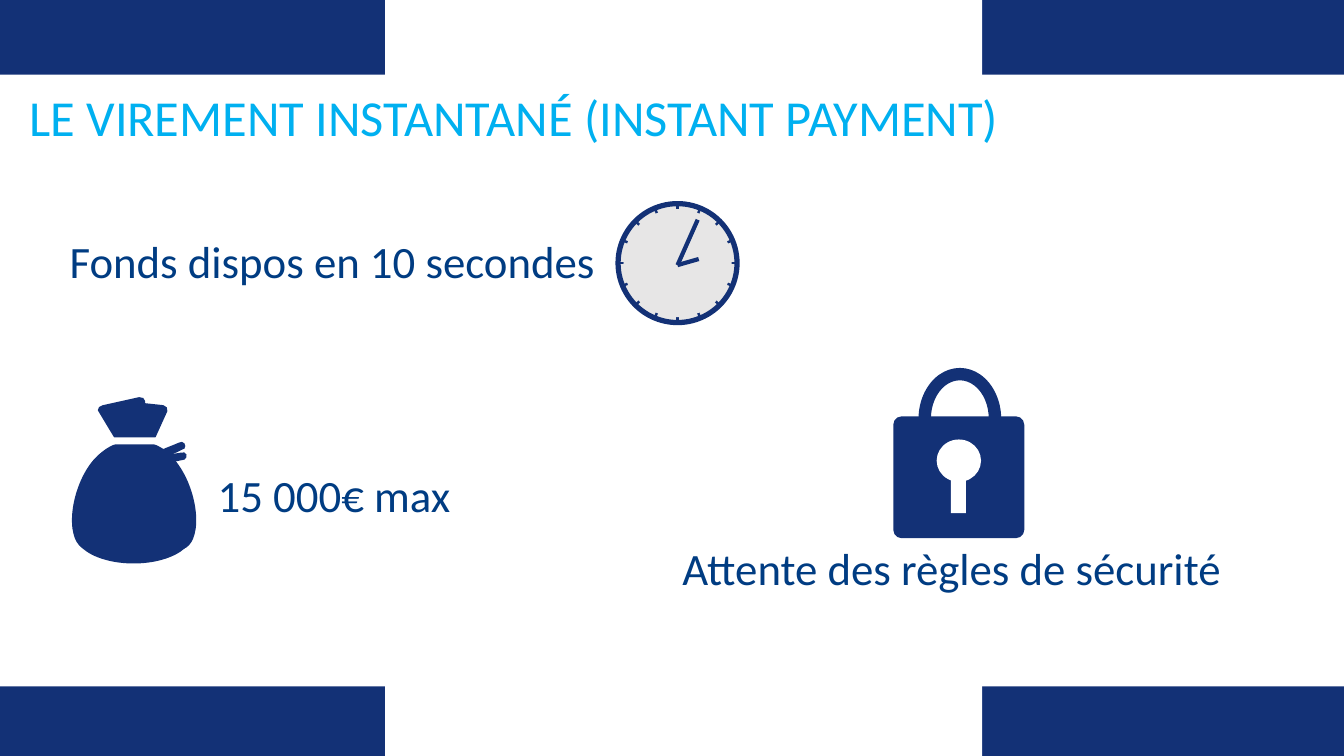
import math

import pptx
import pptx.dml.color
import pptx.enum.shapes
import pptx.enum.text
import pptx.oxml
import pptx.oxml.ns
import pptx.util

Inches, Pt = pptx.util.Inches, pptx.util.Pt
KIND = pptx.enum.shapes.MSO_SHAPE
NAVY, WHITE, DIAL = "133176", "FFFFFF", "E7E6E6"
INK, SKY = "003C82", "00B0F0"
WIDTH, HEIGHT = 13.33, 7.5


def paint(color_format, color):
    color_format.rgb = pptx.dml.color.RGBColor.from_string(color)


def add_part(icon, kind, at, fill, line=None, weight=0, turn=0, adjust=()):
    part = icon.shapes.add_shape(kind, *map(Inches, at))
    part.shadow.inherit = False
    part.rotation = turn
    for index, value in enumerate(adjust):
        part.adjustments[index] = value
    part.fill.solid()
    paint(part.fill.fore_color, fill)
    if line:
        paint(part.line.color, line)
        part.line.width = Pt(weight)
    else:
        part.line.fill.background()
    return part


prs = pptx.Presentation()
prs.slide_width, prs.slide_height = Inches(WIDTH), Inches(HEIGHT)
slide = prs.slides.add_slide(prs.slide_layouts[1])

# Navy background, with white column and band behind everything
slide.background.fill.solid()
paint(slide.background.fill.fore_color, NAVY)
for depth, at in enumerate([(3.82, 0, 5.92, HEIGHT), (0, 0.74, WIDTH, 6.07)]):
    white_area = add_part(slide, KIND.RECTANGLE, at, WHITE)
    slide.shapes._spTree.insert(2 + depth, white_area._element)

# Title and the three statements
title, funds = slide.placeholders
limit, security = [slide.shapes.add_textbox(0, 0, 0, 0) for _ in range(2)]
for statement, text, at, size, color, wrap in [
    (title, "LE VIREMENT INSTANTANÉ (INSTANT PAYMENT)", (0.19, 0.86, 12.97, 0.67), 36, SKY, True),
    (funds, "Fonds dispos en 10 secondes", (0.59, 2.33, 5.49, 0.59), 32, INK, False),
    (limit, "15 000€ max", (2.06, 4.65, 2.61, 0.59), 32, INK, False),
    (security, "Attente des règles de sécurité", (6.67, 5.38, 6.67, 0.59), 32, INK, True),
]:
    statement.left, statement.top, statement.width, statement.height = map(Inches, at)
    frame = statement.text_frame
    frame.text = text
    frame.word_wrap = wrap
    frame.vertical_anchor = pptx.enum.text.MSO_ANCHOR.TOP
    frame.auto_size = pptx.enum.text.MSO_AUTO_SIZE.SHAPE_TO_FIT_TEXT
    paragraph = frame.paragraphs[0]
    paragraph.alignment = pptx.enum.text.PP_ALIGN.LEFT
    paragraph.line_spacing = 0.9
    paragraph.space_before = Pt(10)
    font = paragraph.runs[0].font
    font.name, font.size = "Calibri", Pt(size)
    paint(font.color, color)

title.text_frame.auto_size = pptx.enum.text.MSO_AUTO_SIZE.NONE
title.text_frame.vertical_anchor = pptx.enum.text.MSO_ANCHOR.MIDDLE
title.text_frame.paragraphs[0].space_before = Pt(0)

# The first statement carries no bullet
funds_format = funds.text_frame.paragraphs[0]._p.get_or_add_pPr()
funds_format.set("marL", "0")
funds_format.set("indent", "0")
funds_format.append(pptx.oxml.parse_xml("<a:buNone %s/>" % pptx.oxml.ns.nsdecls("a")))

# Clock: eight diameters under a smaller disc leave sixteen ticks
clock = slide.shapes.add_group_shape()
CX, CY, RADIUS = 6.72, 2.61, 0.59
add_part(clock, KIND.OVAL, (6.04, 1.94, 1.35, 1.31), WHITE, WHITE, 3.75)
add_part(clock, KIND.OVAL, (CX - RADIUS, CY - RADIUS, 2 * RADIUS, 2 * RADIUS), DIAL, NAVY, 3.75)
strokes = []
for step in range(8):
    dx = RADIUS * math.cos(step * math.pi / 8)
    dy = RADIUS * math.sin(step * math.pi / 8)
    strokes.append((CX - dx, CY - dy, CX + dx, CY + dy, 1.75))
hands = [(CX, 2.63, 6.92, 2.18, 3), (CX, 2.63, 6.93, 2.57, 3)]
for *ends, weight in strokes + hands:
    if ends == list(hands[0][:4]):
        add_part(clock, KIND.OVAL, (CX - 0.51, CY - 0.51, 1.02, 1.02), DIAL, DIAL, 3.75)
    stroke = clock.shapes.add_connector(pptx.enum.shapes.MSO_CONNECTOR.STRAIGHT, *map(Inches, ends))
    paint(stroke.line.color, NAVY)
    stroke.line.width = Pt(weight)
    stroke._element.spPr.append(
        pptx.oxml.parse_xml("<a:effectLst %s/>" % pptx.oxml.ns.nsdecls("a")))

# Money bag: body
bag = slide.shapes.add_group_shape()
for kind, at, turn, adjust in [
    (KIND.BLOCK_ARC, (0.74, 4.99, 1.17, 0.6), 180, (110.97, 212.13, 0.5)),
    (KIND.BLOCK_ARC, (0.48, 4.7, 1.04, 0.5), 287.7, (107.18, 212.13, 0.5)),
    (KIND.BLOCK_ARC, (1.14, 4.7, 1.04, 0.5), 72.3, (111.88, 0.82, 0.5)),
    (KIND.BLOCK_ARC, (0.86, 4.37, 0.95, 0.85), 0, (108, 2.25, 0.21)),
    (KIND.TRAPEZOID, (0.86, 4.44, 0.95, 0.94), 0, ()),
]:
    add_part(bag, kind, at, NAVY, turn=turn, adjust=adjust)

# Money bag: neck flaps and string ends; a pair is a corner, six numbers a curve
left_flap = [(0.97, 4.07), (0.97, 4.05, 0.99, 4.02, 1.02, 4.02), (1.38, 3.94),
             (1.41, 3.94, 1.44, 3.95, 1.44, 3.98), (1.41, 4.32),
             (1.41, 4.34, 1.38, 4.37, 1.35, 4.37), (1.22, 4.4),
             (1.19, 4.4, 1.15, 4.39, 1.15, 4.37)]
right_flap = [(1.19, 4.02), (1.19, 3.99, 1.22, 3.97, 1.25, 3.98), (1.62, 4.02),
              (1.65, 4.03, 1.67, 4.05, 1.66, 4.08), (1.52, 4.39),
              (1.52, 4.41, 1.47, 4.43, 1.44, 4.42), (1.31, 4.4),
              (1.28, 4.4, 1.25, 4.38, 1.26, 4.35)]
upper_string = [(1.39, 4.52), (1.39, 4.49, 1.41, 4.47, 1.44, 4.47),
                (1.56, 4.47, 1.7, 4.45, 1.78, 4.39), (1.8, 4.38, 1.81, 4.38, 1.83, 4.4),
                (1.84, 4.42, 1.84, 4.43, 1.83, 4.45), (1.72, 4.54, 1.6, 4.55, 1.44, 4.56),
                (1.42, 4.55, 1.39, 4.54, 1.39, 4.52)]
lower_string = [(1.53, 4.55), (1.53, 4.53, 1.54, 4.51, 1.57, 4.51),
                (1.65, 4.51, 1.72, 4.51, 1.8, 4.49), (1.82, 4.48, 1.84, 4.49, 1.85, 4.51),
                (1.85, 4.53, 1.85, 4.55, 1.83, 4.56), (1.74, 4.59, 1.67, 4.59, 1.57, 4.59),
                (1.54, 4.59, 1.53, 4.57, 1.53, 4.55)]
for outline in (left_flap, right_flap, upper_string, lower_string):
    if outline is upper_string:
        add_part(bag, KIND.RECTANGLE, (0.86, 4.34, 0.95, 0.07), WHITE)
    points = [outline[0]]
    for segment in outline[1:]:
        if len(segment) == 6:  # halfway point of the curve
            x0, y0 = points[-1]
            x1, y1, x2, y2, x3, y3 = segment
            points.append(((x0 + 3 * x1 + 3 * x2 + x3) / 8, (y0 + 3 * y1 + 3 * y2 + y3) / 8))
        points.append(segment[-2:])
    corners = [(Inches(x), Inches(y)) for x, y in points]
    builder = bag.shapes.build_freeform(*corners[0])
    builder.add_line_segments(corners[1:], close=True)
    cloth = builder.convert_to_shape()
    cloth.shadow.inherit = False
    cloth.fill.solid()
    paint(cloth.fill.fore_color, NAVY)
    cloth.line.fill.background()

# Padlock: white halo, body, keyhole, shackle
padlock = slide.shapes.add_group_shape()
add_part(padlock, KIND.BLOCK_ARC, (9.06, 3.6, 0.92, 1.07), WHITE, adjust=(108, 2.23, 0.26))
add_part(padlock, KIND.ROUNDED_RECTANGLE, (8.82, 4.08, 1.38, 1.29), WHITE, WHITE, 0.75, adjust=(0.07,))
add_part(padlock, KIND.ROUNDED_RECTANGLE, (8.86, 4.13, 1.3, 1.21), NAVY, adjust=(0.07,))
add_part(padlock, KIND.OVAL, (9.29, 4.36, 0.44, 0.42), WHITE)
add_part(padlock, KIND.RECTANGLE, (9.43, 4.72, 0.15, 0.37), WHITE)
add_part(padlock, KIND.BLOCK_ARC, (9.11, 3.65, 0.82, 1.01), NAVY, adjust=(108, 1.54, 0.15))

prs.save("out.pptx")
